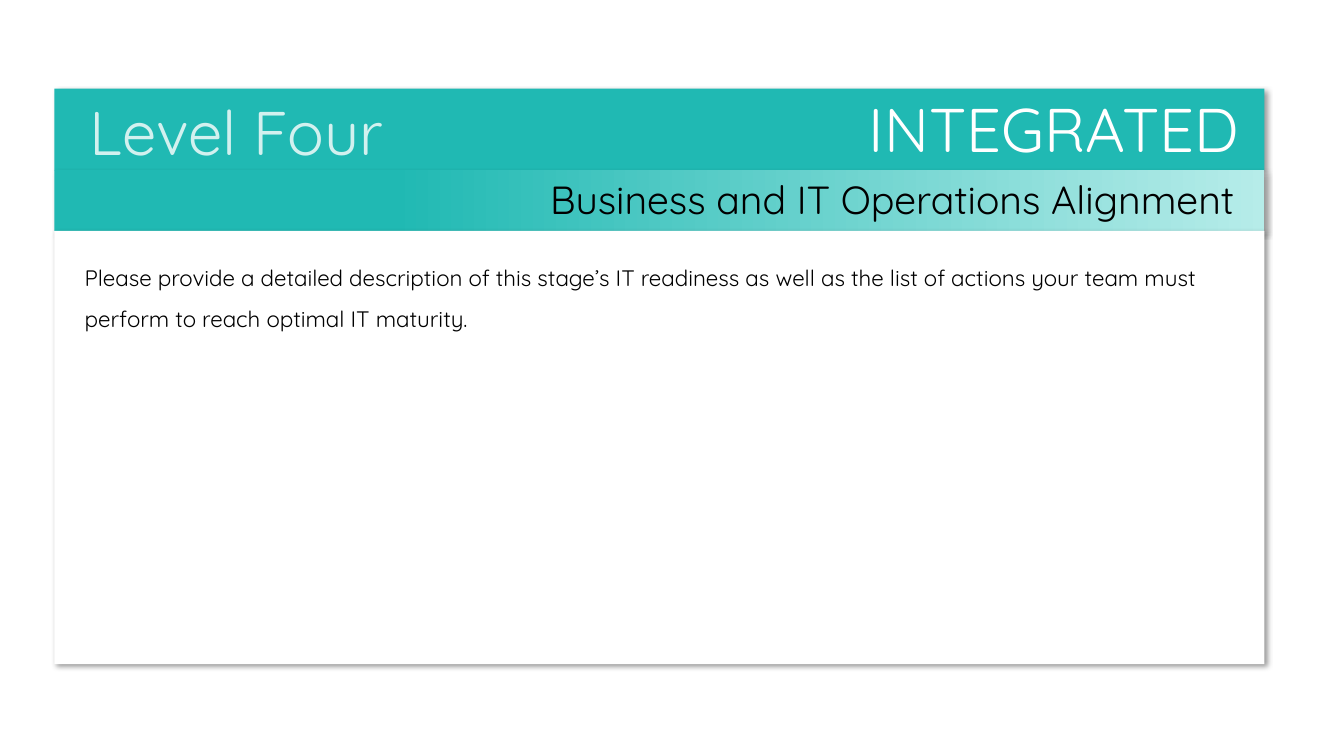
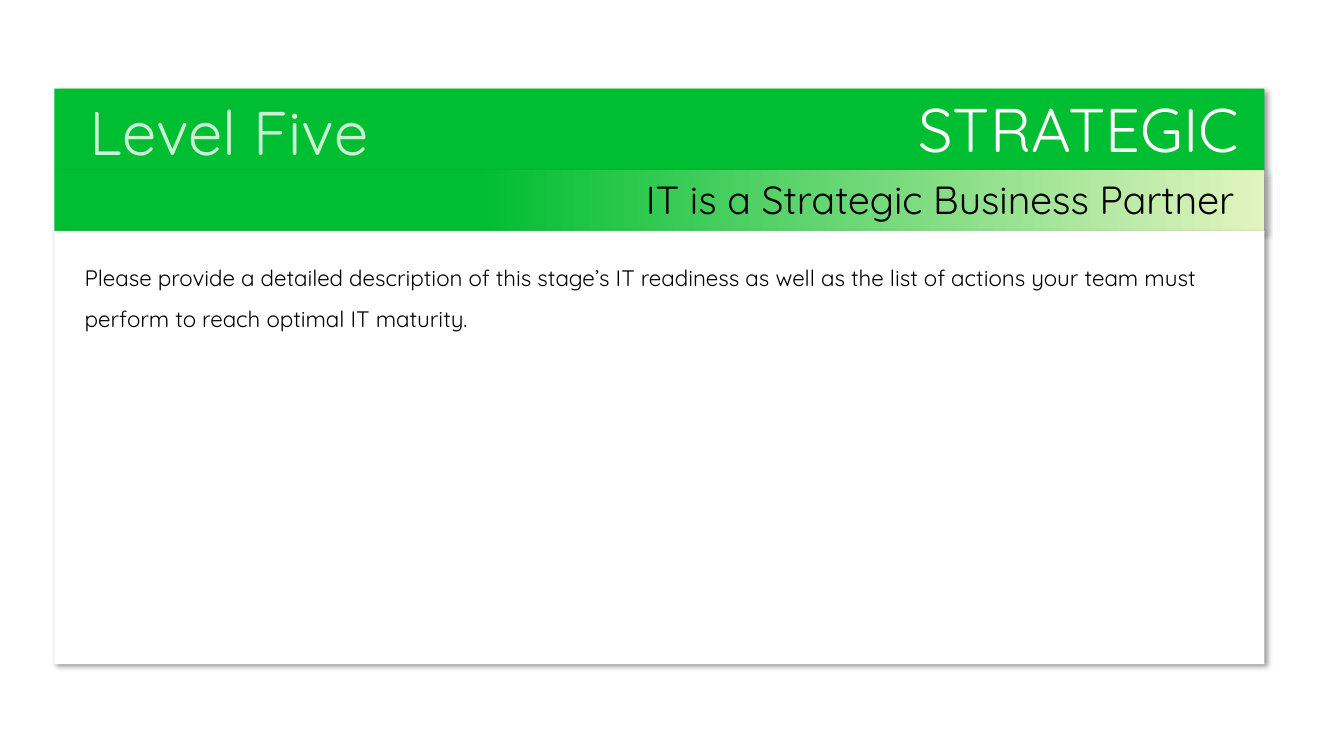
"""Build the slides that describe the levels of IT maturity."""
from lxml import etree
from pptx import Presentation
from pptx.dml.color import RGBColor
from pptx.enum.shapes import MSO_SHAPE
from pptx.enum.text import MSO_ANCHOR, MSO_AUTO_SIZE, PP_ALIGN
from pptx.oxml.ns import qn
from pptx.util import Inches, Pt

RECTANGLE = MSO_SHAPE.RECTANGLE
TOP, BOTTOM = MSO_ANCHOR.TOP, MSO_ANCHOR.BOTTOM
LEFT, RIGHT = PP_ALIGN.LEFT, PP_ALIGN.RIGHT
NO_FIT, GROW = MSO_AUTO_SIZE.NONE, MSO_AUTO_SIZE.SHAPE_TO_FIT_TEXT
TITLE_ONLY = 5

FONT = "Quicksand"
COLORS = {
    "white": "FFFFFF",
    "black": "000000",
    "teal": "20B9B3",
    "pale teal": "B6ECE9",
    "green": "00BE32",
    "pale green": "E2F4C0",
}

CARD_LEFT, CARD_TOP, CARD_WIDTH = 0.54, 0.88, 12
TITLE_HEIGHT, SUBTITLE_HEIGHT, BODY_HEIGHT = 0.81, 0.6, 4.3
SUBTITLE_TOP = CARD_TOP + TITLE_HEIGHT
BODY_TOP = SUBTITLE_TOP + SUBTITLE_HEIGHT

DESCRIPTION = (
    "Please provide a detailed description of this stage’s IT readiness as well as "
    "the list of actions your team must perform to reach optimal IT maturity."
)
LEVELS = [
    ("Level Four", "INTEGRATED", "Business and IT Operations Alignment",
     "teal", "pale teal", 0.28),
    ("Level Five", "STRATEGIC", "IT is a Strategic Business Partner",
     "green", "pale green", 0.35),
]


def rgb(name):
    return RGBColor.from_string(COLORS[name])


class LevelDeck:
    def __init__(self):
        self.presentation = Presentation()
        self.presentation.slide_width = Inches(13.33)
        self.presentation.slide_height = Inches(7.5)
        self.slide = None

    def add_slide(self):
        layout = self.presentation.slide_layouts[TITLE_ONLY]
        self.slide = self.presentation.slides.add_slide(layout)

    def set_text(self, shape, text, size, color, align=LEFT, anchor=TOP,
                 margins=(0.1, 0.05, 0.1, 0.05), fit=NO_FIT):
        frame = shape.text_frame
        frame.text = text
        frame.word_wrap = True
        frame.auto_size = fit
        frame.vertical_anchor = anchor
        (frame.margin_left, frame.margin_top,
         frame.margin_right, frame.margin_bottom) = map(Inches, margins)
        paragraph = frame.paragraphs[0]
        paragraph.alignment = align
        font = paragraph.runs[0].font
        font.name = FONT
        font.size = Pt(size)
        font.color.rgb = rgb(color)
        return paragraph

    def set_alpha(self, parent, percent):
        color = next(parent.iter(qn("a:srgbClr")))
        etree.SubElement(color, qn("a:alpha"), val=str(percent * 1000))

    def add_shadow(self, shape):
        shape.shadow.inherit = False
        effects = shape.element.spPr.find(qn("a:effectLst"))
        shadow = etree.SubElement(
            effects, qn("a:outerShdw"), blurRad=str(Pt(4)), dist=str(Pt(3)),
            dir=str(45 * 60000), algn="tl", rotWithShape="0")
        etree.SubElement(shadow, qn("a:srgbClr"), val=COLORS["black"])
        self.set_alpha(shadow, 40)

    def style_panel(self, shape, color):
        shape.fill.solid()
        shape.fill.fore_color.rgb = rgb(color)
        shape.line.fill.background()
        self.add_shadow(shape)

    def add_panel(self, top, height, color):
        panel = self.slide.shapes.add_shape(
            RECTANGLE, Inches(CARD_LEFT), Inches(top), Inches(CARD_WIDTH), Inches(height))
        self.style_panel(panel, color)
        return panel

    def add_title(self, text, color):
        title = self.slide.shapes.title
        title.left, title.top = Inches(CARD_LEFT), Inches(CARD_TOP)
        title.width, title.height = Inches(CARD_WIDTH), Inches(TITLE_HEIGHT)
        self.style_panel(title, color)
        self.set_text(title, text, 44, "white", RIGHT, BOTTOM, (0.1, 0.05, 0.25, 0.05))

    def add_subtitle(self, text, color, pale_color, fade_start):
        band = self.add_panel(SUBTITLE_TOP, SUBTITLE_HEIGHT, color)
        band.fill.gradient()
        band.fill.gradient_angle = 0
        stops = ((fade_start, color), (1.0, pale_color))
        for stop, (position, name) in zip(band.fill.gradient_stops, stops):
            stop.position = position
            stop.color.rgb = rgb(name)
        self.set_text(band, text, 28, "black", RIGHT, margins=(0.1, 0.05, 0.3, 0.05))

    def add_body(self, text):
        body = self.add_panel(BODY_TOP, BODY_HEIGHT, "white")
        paragraph = self.set_text(body, text, 16, "black", margins=(0.3, 0.2, 0.3, 0.2))
        paragraph.line_spacing = 1.5

    def add_level_label(self, text):
        label = self.slide.shapes.add_textbox(
            Inches(0.79), Inches(CARD_TOP), Inches(4.79), Inches(0.84))
        self.set_text(label, text, 44, "white", fit=GROW)
        self.set_alpha(label.element, 80)


def main():
    deck = LevelDeck()
    for level, title, subtitle, color, pale_color, fade_start in LEVELS:
        deck.add_slide()
        deck.add_title(title, color)
        deck.add_subtitle(subtitle, color, pale_color, fade_start)
        deck.add_body(DESCRIPTION)
        deck.add_level_label(level)
    deck.presentation.save("out.pptx")


if __name__ == "__main__":
    main()
